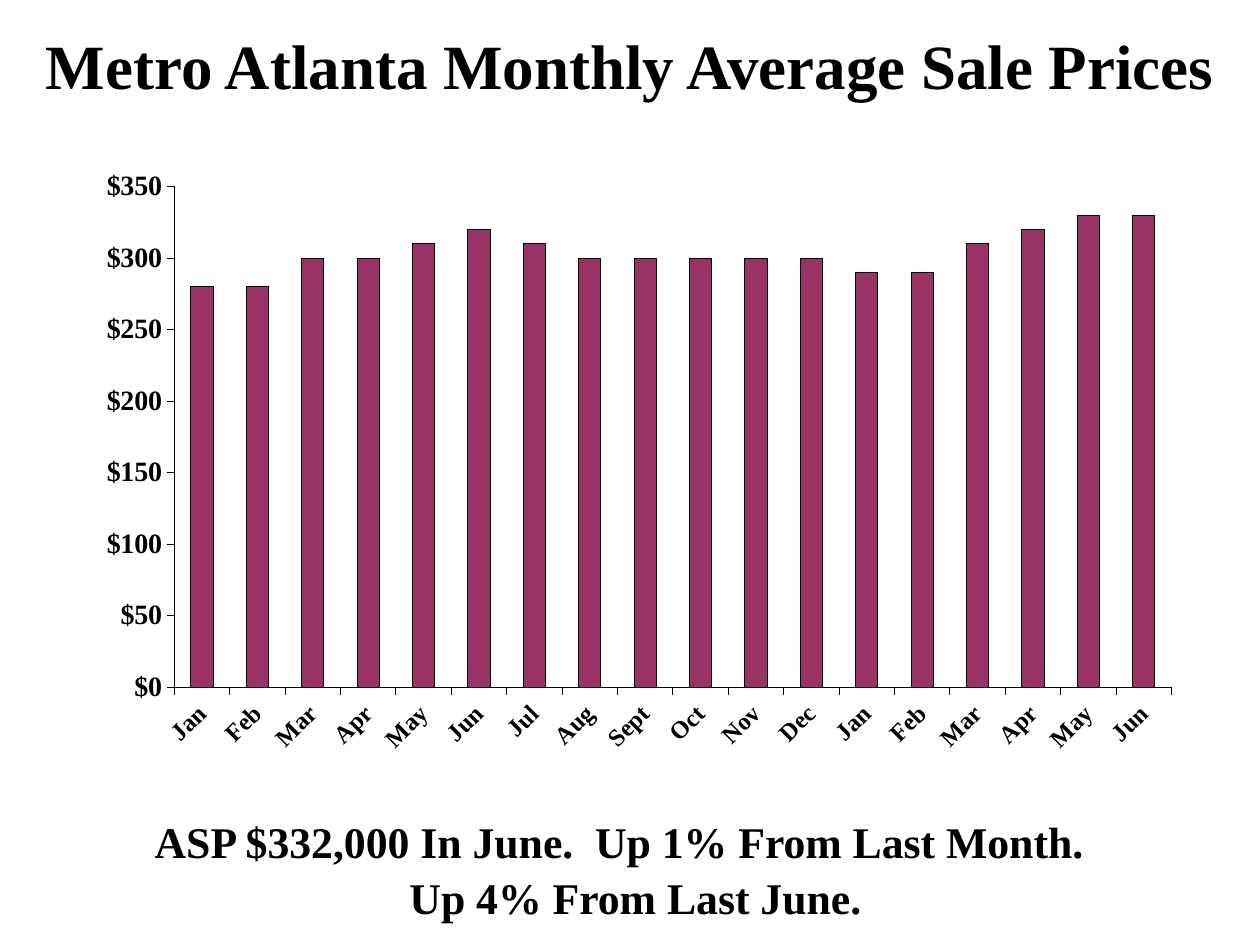
from lxml import etree
from pptx import Presentation
from pptx import util as u
from pptx.chart.data import CategoryChartData
from pptx.dml.color import RGBColor
from pptx.enum import chart as ch, text
from pptx.oxml.ns import qn

COLORS = {"ink": "000000", "bar": "993366", "paper": "FFFFFF"}
FONT = "Times New Roman"
HAIRLINE = u.Pt(0.5)
MONTHS = ["Jan", "Feb", "Mar", "Apr", "May", "Jun",
          "Jul", "Aug", "Sept", "Oct", "Nov", "Dec"]
PRICES = [280, 280, 300, 300, 310, 320, 310, 300, 300,
          300, 300, 300, 290, 290, 310, 320, 330, 330]
PLOT_AREA = {"x": 0.107, "y": 0.088, "w": 0.876, "h": 0.717}


def color(name):
    return RGBColor.from_string(COLORS[name])


def style_font(font, size):
    font.name = FONT
    font.size = u.Pt(size)
    font.bold = True
    font.color.rgb = color("ink")


def style_line(line):
    line.color.rgb = color("ink")
    line.width = HAIRLINE


def add_text(s, top, height, lines, size, spacing=1.0, gap=0):
    sp = s.shapes.add_textbox(u.Pt(0), u.Pt(top), u.Pt(720), u.Pt(height))
    tf = sp.text_frame
    tf.word_wrap = True
    tf.vertical_anchor = text.MSO_ANCHOR.MIDDLE
    for i, line in enumerate(lines):
        p = tf.add_paragraph() if i else tf.paragraphs[0]
        p.alignment = text.PP_ALIGN.CENTER
        p.line_spacing = spacing
        p.space_before = u.Pt(gap if i else 0)
        r = p.add_run()
        r.text = line
        style_font(r.font, size)


def set_plot_layout(chart):
    area = chart.plots[0]._element.getparent()
    for old in area.findall(qn("c:layout")):
        area.remove(old)
    layout = etree.Element(qn("c:layout"))
    manual = etree.SubElement(layout, qn("c:manualLayout"))
    settings = {"layoutTarget": "inner", "xMode": "edge", "yMode": "edge", **PLOT_AREA}
    for tag, value in settings.items():
        etree.SubElement(manual, qn(f"c:{tag}")).set("val", str(value))
    area.insert(0, layout)


def style_axis(axis, size):
    axis.has_major_gridlines = False
    axis.major_tick_mark = ch.XL_TICK_MARK.OUTSIDE
    axis.minor_tick_mark = ch.XL_TICK_MARK.NONE
    style_font(axis.tick_labels.font, size)
    style_line(axis.format.line)


def add_price_chart(s):
    data = CategoryChartData()
    data.categories = MONTHS + MONTHS[:6]
    data.add_series("Series 1", PRICES)
    chart = s.shapes.add_chart(ch.XL_CHART_TYPE.COLUMN_CLUSTERED, u.Pt(30), u.Pt(71.5),
                               u.Pt(650.5), u.Pt(399), data).chart
    chart.has_legend = False
    chart.has_title = False
    style_font(chart.font, 14)
    set_plot_layout(chart)

    plot = chart.plots[0]
    plot.gap_width = 150
    plot.vary_by_categories = False
    bars = plot.series[0].format
    bars.fill.solid()
    bars.fill.fore_color.rgb = color("bar")
    style_line(bars.line)

    months = chart.category_axis
    style_axis(months, 14)
    months.tick_label_position = ch.XL_TICK_LABEL_POSITION.LOW
    months._element.find(qn("c:txPr")).find(qn("a:bodyPr")).set("rot", "-2700000")

    dollars = chart.value_axis
    style_axis(dollars, 16)
    dollars.minimum_scale = 0
    dollars.maximum_scale = 350
    dollars.major_unit = 50
    dollars.tick_labels.number_format = '"$"#,##0'
    dollars.tick_labels.number_format_is_linked = False


def main():
    prs = Presentation()
    prs.slide_width, prs.slide_height = u.Pt(720), u.Pt(540)
    s = prs.slides.add_slide(prs.slide_layouts[6])
    s.background.fill.solid()
    s.background.fill.fore_color.rgb = color("paper")
    add_text(s, 462.5, 72, ["ASP $332,000 In June.  Up 1% From Last Month.  ",
                            " Up 4% From Last June."], 25, spacing=0.9, gap=5)
    add_text(s, 11.5, 50, ["Metro Atlanta Monthly Average Sale Prices"], 36)
    add_price_chart(s)
    prs.save("out.pptx")


if __name__ == "__main__":
    main()
